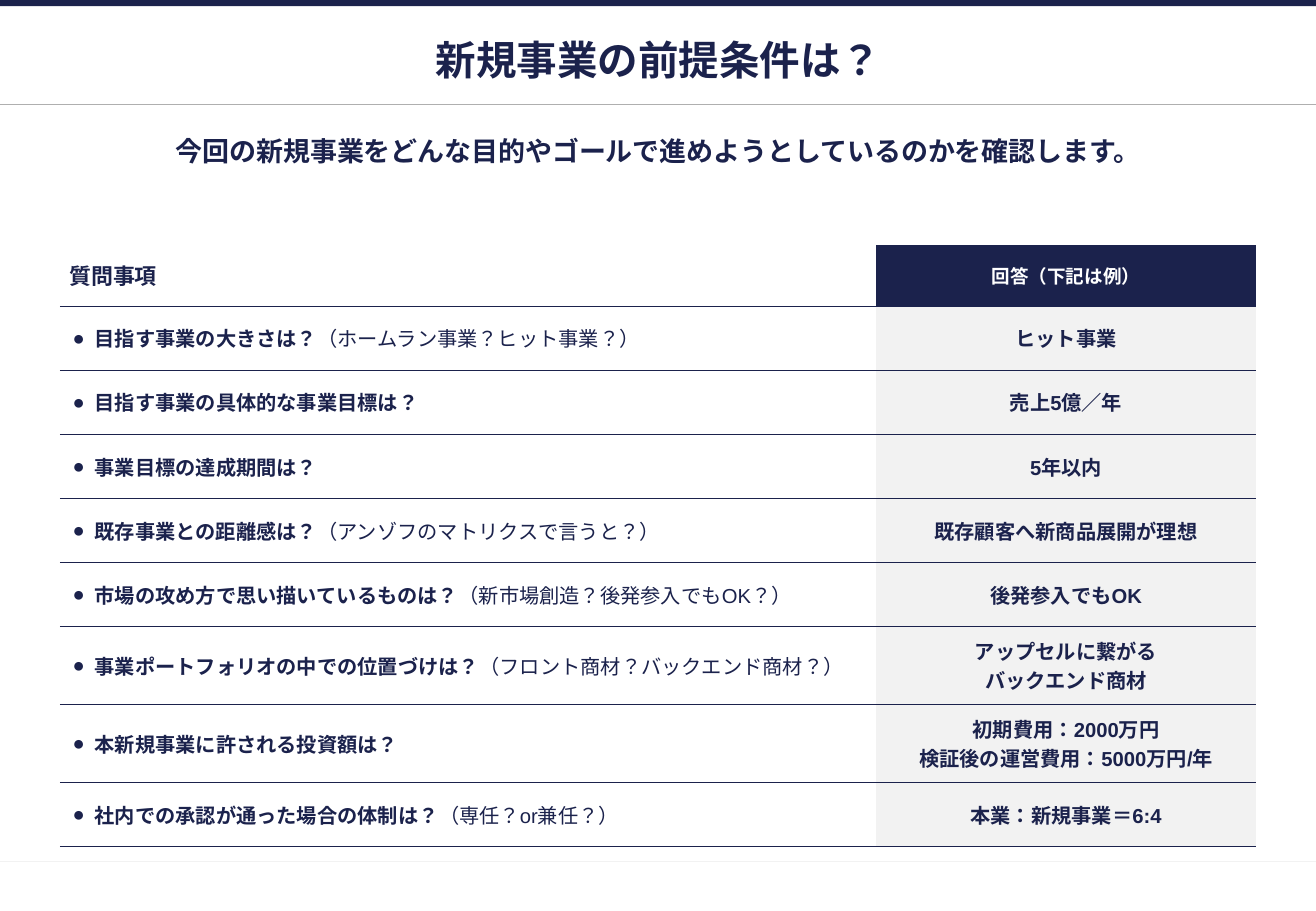
from lxml.etree import SubElement
from pptx import Presentation
from pptx.dml.color import RGBColor
from pptx.enum.lang import MSO_LANGUAGE_ID
from pptx.enum.shapes import MSO_CONNECTOR, MSO_SHAPE
from pptx.enum.text import MSO_ANCHOR, PP_ALIGN
from pptx.oxml.ns import qn
from pptx.util import Cm, Pt

NAVY, GRAY, PALE, WHITE = "1B224C", "AFAFAF", "F2F2F2", "FFFFFF"
WIDTH = 27.51


def rgb(value):
    return RGBColor.from_string(value)


def write(tf, paragraphs, size=12, color=NAVY, align=PP_ALIGN.CENTER, bullet=False):
    """Each paragraph is a list: bold text, then an optional regular remark."""
    for i, parts in enumerate(paragraphs):
        p = tf.paragraphs[0] if i == 0 else tf.add_paragraph()
        p.alignment = align
        if bullet:
            pPr = p._p.get_or_add_pPr()
            pPr.set("marL", str(Cm(0.53)))
            pPr.set("indent", str(-Cm(0.46)))
            SubElement(SubElement(pPr, qn("a:buClr")), qn("a:srgbClr"), val=NAVY)
            SubElement(pPr, qn("a:buFont"), typeface="Arial")
            SubElement(pPr, qn("a:buChar"), char="●")
        for j, text in enumerate(parts):
            r = p.add_run()
            r.text = text
            r.font.name = "Arial"
            r.font.size = Pt(size)
            r.font.bold = j == 0
            r.font.color.rgb = rgb(color)
            r.font.language_id = MSO_LANGUAGE_ID.JAPANESE


prs = Presentation()
prs.slide_width, prs.slide_height = Cm(WIDTH), Cm(19.05)
s = prs.slides.add_slide(prs.slide_layouts[6])

# Top bar and the rules under the heading and above the footer
bar = s.shapes.add_shape(MSO_SHAPE.RECTANGLE, 0, 0, Cm(WIDTH), Cm(0.13))
bar.shadow.inherit = False
bar.fill.solid()
bar.fill.fore_color.rgb = rgb(NAVY)
bar.line.fill.background()
for y, color in [(2.18, GRAY), (18.01, PALE)]:
    rule = s.shapes.add_connector(MSO_CONNECTOR.STRAIGHT, 0, Cm(y), Cm(WIDTH), Cm(y))
    rule.line.color.rgb = rgb(color)
    rule.line.width = Pt(0.75)
    SubElement(rule._element.spPr, qn("a:effectLst"))

# Title and lead sentence
for text, y, height, size, anchor in [
    ("新規事業の前提条件は？", 0.74, 0.99, 24, MSO_ANCHOR.MIDDLE),
    ("今回の新規事業をどんな目的やゴールで進めようとしているのかを確認します。",
     2.72, 1.9, 16, MSO_ANCHOR.TOP),
]:
    tf = s.shapes.add_textbox(Cm(1.27), Cm(y), Cm(25), Cm(height)).text_frame
    tf.word_wrap = True
    tf.vertical_anchor = anchor
    tf.margin_left = tf.margin_right = tf.margin_top = tf.margin_bottom = Cm(0.1)
    write(tf, [[text]], size=size)

# Question table: question parts, answer lines
rows = [
    (["質問事項"], ["回答（下記は例）"]),
    (["目指す事業の大きさは？", "（ホームラン事業？ヒット事業？）"], ["ヒット事業"]),
    (["目指す事業の具体的な事業目標は？"], ["売上5億／年"]),
    (["事業目標の達成期間は？"], ["5年以内"]),
    (["既存事業との距離感は？", "（アンゾフのマトリクスで言うと？）"], ["既存顧客へ新商品展開が理想"]),
    (["市場の攻め方で思い描いているものは？", "（新市場創造？後発参入でもOK？）"], ["後発参入でもOK"]),
    (["事業ポートフォリオの中での位置づけは？", "（フロント商材？バックエンド商材？）"],
     ["アップセルに繋がる", "バックエンド商材"]),
    (["本新規事業に許される投資額は？"], ["初期費用：2000万円", "検証後の運営費用：5000万円/年"]),
    (["社内での承認が通った場合の体制は？", "（専任？or兼任？）"], ["本業：新規事業＝6:4"]),
]
heights = [1.28] + [1.63 if len(answer) > 1 else 1.34 for _, answer in rows[1:]]
table = s.shapes.add_table(len(rows), 2, Cm(1.25), Cm(5.12), Cm(25), Cm(sum(heights))).table
table.first_row = table.horz_banding = False
table.columns[0].width, table.columns[1].width = Cm(17.07), Cm(7.93)

for i, (question, answer) in enumerate(rows):
    header = i == 0
    table.rows[i].height = Cm(heights[i])
    for j in range(2):
        cell = table.cell(i, j)
        cell.vertical_anchor = MSO_ANCHOR.MIDDLE
        cell.margin_left = cell.margin_right = Cm(0.1 if j else 0.2)
        cell.margin_top = cell.margin_bottom = Cm(0.3 if header else 0.2)

        # Horizontal borders only, none above the header
        tcPr = cell._tc.get_or_add_tcPr()
        for side in ("lnL", "lnR", "lnT", "lnB"):
            ln = SubElement(tcPr, qn(f"a:{side}"), w=str(Pt(0.75)))
            if side == "lnB" or (side == "lnT" and not header):
                SubElement(SubElement(ln, qn("a:solidFill")), qn("a:srgbClr"), val=NAVY)
            else:
                SubElement(ln, qn("a:noFill"))
        if j:
            cell.fill.solid()
            cell.fill.fore_color.rgb = rgb(NAVY if header else PALE)
        else:
            cell.fill.background()

    write(table.cell(i, 0).text_frame, [question], size=13 if header else 12,
          align=PP_ALIGN.LEFT, bullet=not header)
    write(table.cell(i, 1).text_frame, [[line] for line in answer],
          size=11 if header else 12, color=WHITE if header else NAVY)

prs.save("out.pptx")
